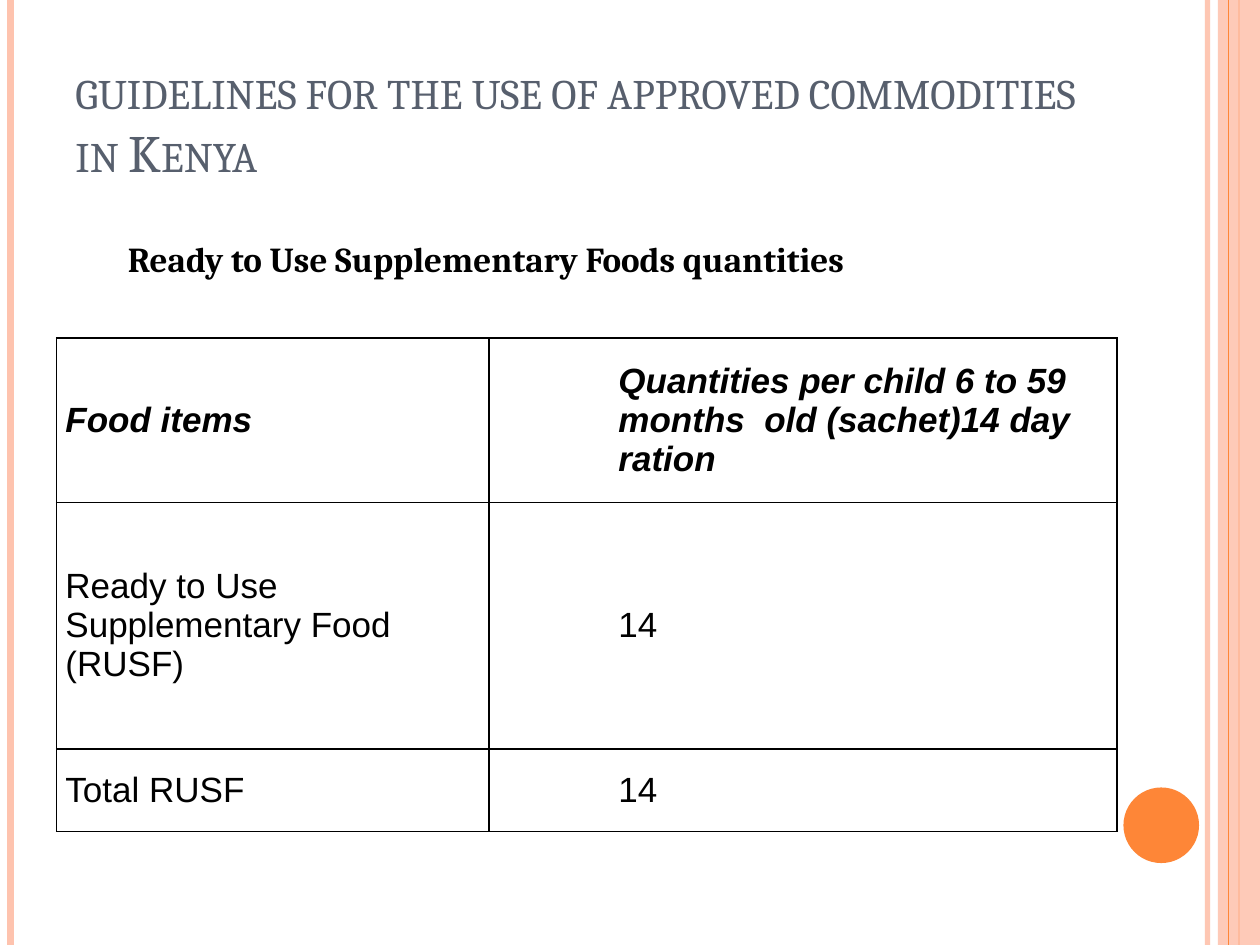
from lxml import etree
from pptx import Presentation
from pptx.dml.color import RGBColor
from pptx.enum.shapes import MSO_CONNECTOR, MSO_SHAPE
from pptx.enum.text import MSO_ANCHOR
from pptx.oxml.ns import qn
from pptx.util import Pt

COLORS = {"peach": "FEC3AE", "orange": "FE8637", "slate": "575F6D",
          "black": "000000", "white": "FFFFFF"}


def paint(fill, color, opacity=100):
    fill.solid()
    fill.fore_color.rgb = RGBColor.from_string(COLORS[color])
    if opacity < 100:
        tint = fill._xPr.find(".//" + qn("a:srgbClr"))
        etree.SubElement(tint, qn("a:alpha")).set("val", str(opacity * 1000))


def style(paragraph, size, face, color, bold=False, italic=False):
    font = paragraph.font
    font.size, font.name = Pt(size), face
    font.bold, font.italic = bold, italic
    font.color.rgb = RGBColor.from_string(COLORS[color])


prs = Presentation()
prs.slide_width, prs.slide_height = Pt(720), Pt(540)
slide = prs.slides.add_slide(prs.slide_layouts[6])
shapes = slide.shapes
paint(slide.background.fill, "white")

decorations = [
    ("stripe", 690, 3, "peach", 93),
    ("stripe", 6, 4.5, "peach", 100),
    ("stripe", 708, 1.5, "orange", 100),
    (MSO_SHAPE.RECTANGLE, (696, 0, 24, 540), None, "peach", 87),
    ("stripe", 702, 0.75, "orange", 100),
    (MSO_SHAPE.OVAL, (642, 450, 43.2, 43.2), None, "orange", 100),
]
for kind, place, weight, color, opacity in decorations:
    if kind == "stripe":
        stripe = shapes.add_connector(
            MSO_CONNECTOR.STRAIGHT, Pt(place), Pt(0), Pt(place), Pt(540))
        stripe.line.width = Pt(weight)
        paint(stripe.line.fill, color, opacity)
        etree.SubElement(stripe._element.spPr, qn("a:effectLst"))
    else:
        accent = shapes.add_shape(kind, *map(Pt, place))
        accent.shadow.inherit = False
        paint(accent.fill, color, opacity)
        accent.line.fill.background()

title = shapes.add_textbox(Pt(36), Pt(21.6), Pt(588), Pt(90)).text_frame
title.word_wrap = True
title.vertical_anchor = MSO_ANCHOR.BOTTOM
title.margin_bottom = Pt(7.2)
heading = title.paragraphs[0]
heading.text = "guidelines for the use of approved commodities in Kenya"
style(heading, 30, "Cambria", "slate")
heading.runs[0]._r.get_or_add_rPr().set("cap", "small")

body = shapes.add_textbox(Pt(66), Pt(132), Pt(588), Pt(384)).text_frame
body.word_wrap = True
subtitle = body.paragraphs[0]
subtitle.text = "Ready to Use Supplementary Foods quantities"
subtitle.space_before = Pt(6)
style(subtitle, 20, "Cambria", "black", bold=True)

rations = [
    ("Food items", "Quantities per child 6 to 59 months  old (sachet)14 day ration"),
    ("Ready to Use Supplementary Food (RUSF)", "14"),
    ("Total RUSF", "14"),
]
column_widths = [247, 359]
row_heights = [94, 141, 47]
indents = [5, 74]
table = shapes.add_table(3, 2, Pt(32.4), Pt(193), Pt(sum(column_widths)),
                         Pt(sum(row_heights))).table
table.first_row = table.horz_banding = False
for column, width in zip(table.columns, column_widths):
    column.width = Pt(width)
for row, height in zip(table.rows, row_heights):
    row.height = Pt(height)

for r, ration in enumerate(rations):
    for c, words in enumerate(ration):
        cell = table.cell(r, c)
        cell.margin_left = cell.margin_right = Pt(0)
        cell.margin_top = cell.margin_bottom = Pt(0)
        cell.vertical_anchor = MSO_ANCHOR.MIDDLE
        entry = cell.text_frame.paragraphs[0]
        entry.text = words
        style(entry, 20, "Arial", "black", bold=r == 0, italic=r == 0)
        entry._p.get_or_add_pPr().set("marL", str(Pt(indents[c])))
        cell_format = cell._tc.get_or_add_tcPr()
        for side in ("a:lnL", "a:lnR", "a:lnT", "a:lnB"):
            border = etree.SubElement(cell_format, qn(side), w=str(Pt(1)))
            ink = etree.SubElement(border, qn("a:solidFill"))
            etree.SubElement(ink, qn("a:srgbClr"), val=COLORS["black"])
        cell.fill.background()

prs.save("out.pptx")
